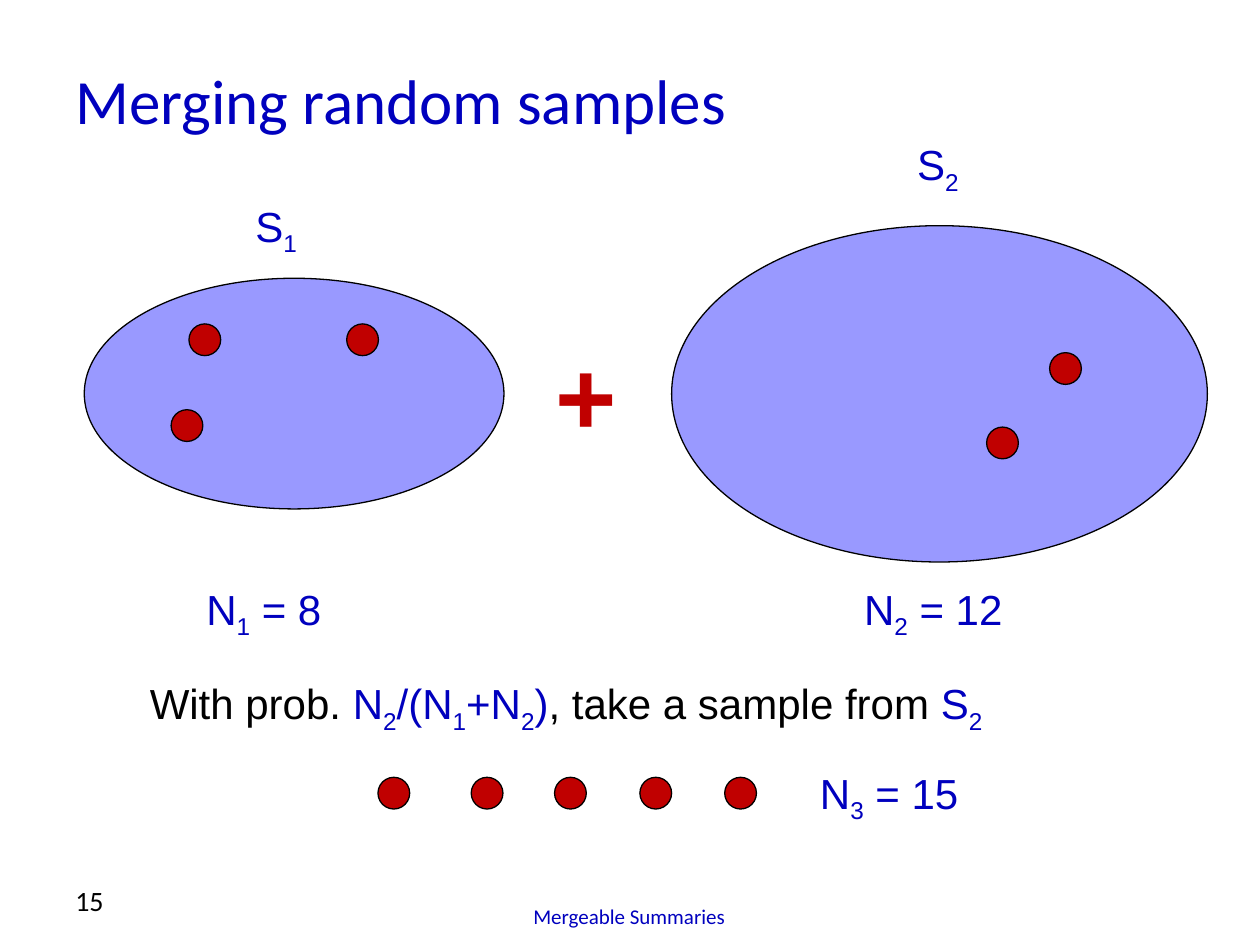
from dataclasses import dataclass

from pptx import Presentation
from pptx.dml.color import RGBColor
from pptx.enum.shapes import MSO_SHAPE
from pptx.enum.text import MSO_ANCHOR, MSO_AUTO_SIZE, PP_ALIGN
from pptx.util import Cm, Pt

OVAL = MSO_SHAPE.OVAL
TOP, MIDDLE, BOTTOM = MSO_ANCHOR.TOP, MSO_ANCHOR.MIDDLE, MSO_ANCHOR.BOTTOM
LEFT, CENTER = PP_ALIGN.LEFT, PP_ALIGN.CENTER
FIT_SHAPE, FIXED = MSO_AUTO_SIZE.SHAPE_TO_FIT_TEXT, MSO_AUTO_SIZE.NONE

COLORS = {"blue": "0000BE", "red": "C00000", "black": "000000", "set": "9999FF"}
DOT_SIZE = 0.64
MERGED_Y = 15.67


@dataclass
class Ellipse:
    """An outlined ellipse, measured in centimetres."""
    x: float
    y: float
    w: float
    h: float
    fill: str


@dataclass
class Label:
    """Text pieces as (text, colour); "_" makes the next character a subscript."""
    x: float
    y: float
    w: float
    h: float
    pieces: list[tuple[str, str]]
    size: int = 24
    font: str = "Arial"
    bold: bool = False
    wrap: bool = False
    anchor: MSO_ANCHOR = TOP
    align: PP_ALIGN = LEFT


def rgb(name: str) -> RGBColor:
    return RGBColor.from_string(COLORS[name])


def draw_ellipse(s, e: Ellipse) -> None:
    sp = s.shapes.add_shape(OVAL, Cm(e.x), Cm(e.y), Cm(e.w), Cm(e.h))
    sp.shadow.inherit = False
    sp.fill.solid()
    sp.fill.fore_color.rgb = rgb(e.fill)
    sp.line.color.rgb = rgb("black")
    sp.line.width = Pt(0.75)


def add_run(p, text: str, color: str, label: Label, subscript: bool) -> None:
    r = p.add_run()
    r.text = text
    r.font.name = label.font
    r.font.size = Pt(label.size)
    r.font.bold = label.bold
    r.font.color.rgb = rgb(color)
    if subscript:
        r._r.get_or_add_rPr().set("baseline", "-25000")


def draw_label(s, label: Label) -> None:
    sp = s.shapes.add_textbox(Cm(label.x), Cm(label.y), Cm(label.w), Cm(label.h))
    tf = sp.text_frame
    tf.word_wrap = label.wrap
    tf.auto_size = FIXED if label.wrap else FIT_SHAPE
    tf.vertical_anchor = label.anchor
    p = tf.paragraphs[0]
    p.alignment = label.align
    for text, color in label.pieces:
        plain, *rest = text.split("_")
        add_run(p, plain, color, label, False)
        for part in rest:
            add_run(p, part[0], color, label, True)
            if part[1:]:
                add_run(p, part[1:], color, label, False)


SETS = [
    Ellipse(1.7, 5.61, 8.46, 4.65, "set"),
    Ellipse(13.54, 4.55, 10.8, 6.78, "set"),
]

# Sample points in S1, in S2 and in the merged row
DOTS = [(3.81, 6.53), (6.99, 6.53), (3.45, 8.26), (19.89, 8.61), (21.16, 7.11)]
DOTS += [(x, MERGED_Y) for x in (7.62, 9.5, 11.18, 12.9, 14.61)]

LABELS = [
    # Title, footer and slide number
    Label(1.27, 0.84, 24.13, 2.34, [("Merging random samples", "blue")],
          36, "Calibri", wrap=True, anchor=MIDDLE),
    Label(6.55, 17.58, 12.27, 1.27, [("Mergeable Summaries", "blue")],
          12, "Calibri", wrap=True, anchor=BOTTOM, align=CENTER),
    Label(1.27, 17.35, 5.92, 1.27, [("15", "black")],
          16, "Calibri", wrap=True, anchor=BOTTOM),
    # Set names, sizes and the plus sign
    Label(10.95, 6.53, 1.75, 2.82, [("+", "red")], 60, bold=True),
    Label(4.9, 3.91, 1.4, 1.27, [("S_1", "blue")]),
    Label(18.24, 2.67, 1.4, 1.27, [("S_2", "blue")]),
    Label(3.91, 11.63, 2.9, 1.27, [("N_1 = 8", "blue")]),
    Label(17.17, 11.63, 3.38, 1.27, [("N_2 = 12", "blue")]),
    Label(16.28, 15.34, 3.38, 1.27, [("N_3 = 15", "blue")]),
    # Merging rule
    Label(2.77, 13.54, 17.78, 1.27, [
        ("With prob. ", "black"), ("N_2/(N_1+N_2)", "blue"),
        (", take a sample from ", "black"), ("S_2", "blue")]),
]


def main() -> None:
    prs = Presentation()
    prs.slide_width, prs.slide_height = Cm(25.4), Cm(19.05)
    s = prs.slides.add_slide(prs.slide_layouts[6])
    for e in SETS:
        draw_ellipse(s, e)
    for x, y in DOTS:
        draw_ellipse(s, Ellipse(x, y, DOT_SIZE, DOT_SIZE, "red"))
    for label in LABELS:
        draw_label(s, label)
    prs.save("out.pptx")


if __name__ == "__main__":
    main()
